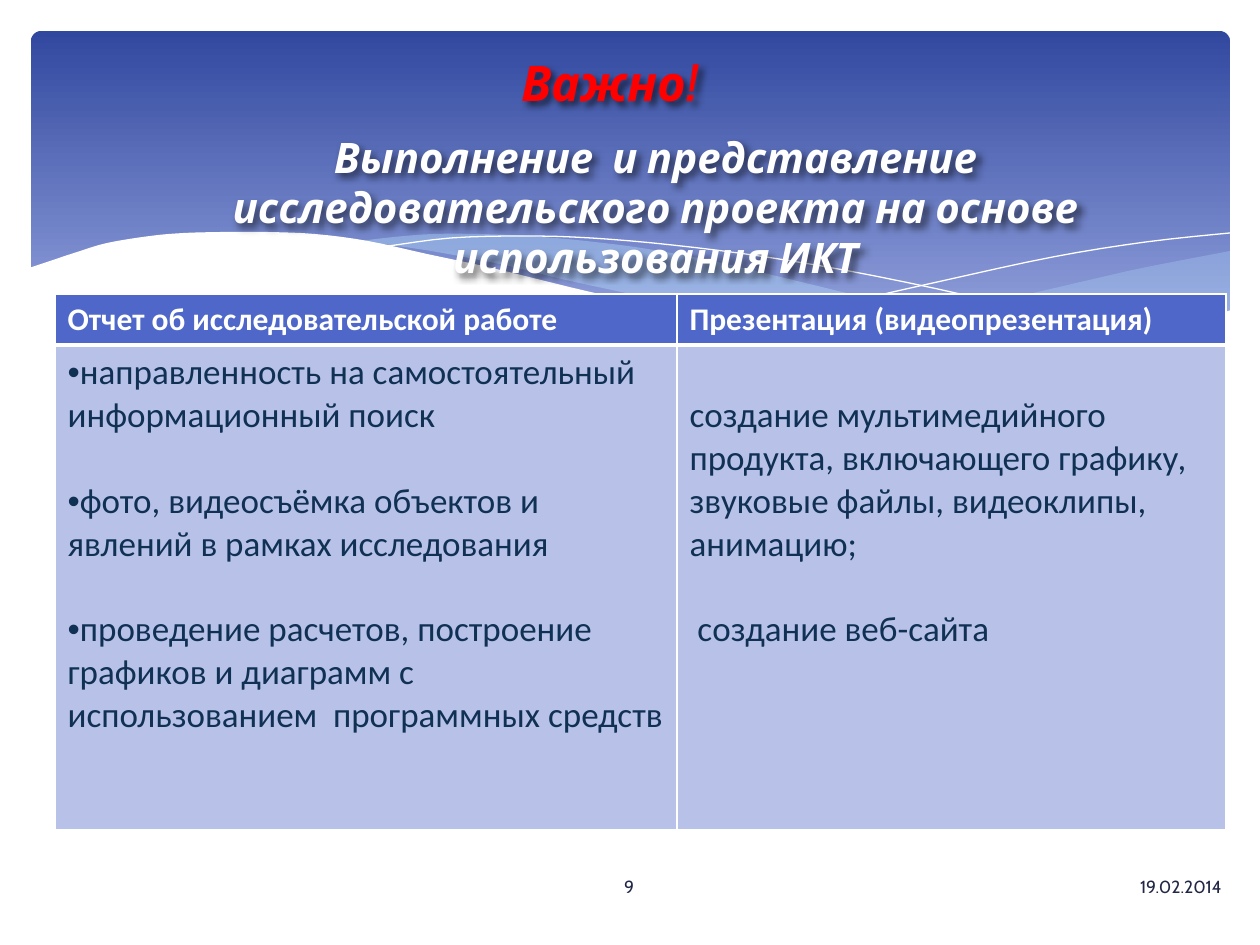
from lxml import etree
from pptx import Presentation
from pptx import util as u
from pptx.dml.color import RGBColor
from pptx.enum import shapes, text
from pptx.oxml import ns

WHITE = RGBColor(0xFF, 0xFF, 0xFF)
RED = RGBColor(0xFF, 0x00, 0x00)
NAVY = RGBColor(0x21, 0x27, 0x45)
INK = RGBColor(0x10, 0x31, 0x54)
HEADER = RGBColor(0x4E, 0x67, 0xC8)
BODY = RGBColor(0xB8, 0xC2, 0xE9)
SKY_TOP = RGBColor(0x31, 0x48, 0x9F)
SKY_BOTTOM = RGBColor(0x95, 0xA4, 0xDE)
PALE = RGBColor(0xB4, 0xDC, 0xFA)
EMU_PER_PX = 914400 / 126
LINE_GAP = 24.4

PALE_RIGHT = [
    [(1230, 251), (1142, 268), (1085, 281), (981, 305), (890, 324), (833, 334)],
    [(833, 334), (922, 345), (998, 349), (1064, 348), (1121, 343), (1178, 329),
     (1230, 311)],
]
PALE_MIDDLE = [
    [(1125, 344), (1017, 328), (890, 303), (793, 280), (717, 262), (648, 249),
     (586, 241), (529, 236), (479, 234), (433, 234), (394, 237), (360, 241)],
    [(360, 241), (431, 251), (509, 266), (566, 280), (668, 302), (757, 321),
     (838, 335), (910, 345), (974, 349), (1043, 350), (1092, 348), (1125, 344)],
]
FALLING_LINE = [
    [(389, 246), (451, 238), (524, 236), (591, 238), (672, 245), (766, 257),
     (875, 276), (1002, 304), (1143, 343)],
]
RISING_LINE = [
    [(772, 324), (847, 303), (942, 281), (1053, 257), (1146, 242), (1230, 233)],
]
WHITE_WAVE = [
    [(1231, 310), (1172, 330), (1118, 342), (1055, 348), (980, 348), (892, 343),
     (789, 330), (699, 315), (599, 294), (492, 268), (427, 254), (368, 241),
     (315, 234), (266, 232), (223, 232), (184, 233), (150, 236), (107, 243),
     (74, 253), (50, 261), (29, 268)],
    [(29, 268), (29, 415)],
    [(29, 415), (1231, 415)],
]


def px(n):
    return u.Emu(round(n * EMU_PER_PX))


def smooth(knots, steps=4):
    pts = [knots[0]] + knots + [knots[-1]]
    curve = [knots[0]]
    for a, b, c, d in zip(pts, pts[1:], pts[2:], pts[3:]):
        for t in (i / steps for i in range(1, steps + 1)):
            curve.append(tuple(
                (2 * q + (r - p) * t + (2 * p - 5 * q + 4 * r - s) * t ** 2
                 + (3 * q - p - 3 * r + s) * t ** 3) / 2
                for p, q, r, s in zip(a, b, c, d)))
    return curve


def add(parent, tag, **attrs):
    return etree.SubElement(parent, ns.qn(tag), **attrs)


class Deck:
    def __init__(self, width, height):
        self.prs = Presentation()
        self.prs.slide_width, self.prs.slide_height = px(width), px(height)
        self.slide = self.prs.slides.add_slide(self.prs.slide_layouts[5])
        self.shapes = self.slide.shapes

    def panel(self, x, y, w, h):
        sp = self.shapes.add_shape(
            shapes.MSO_SHAPE.ROUNDED_RECTANGLE, px(x), px(y), px(w), px(h))
        sp.adjustments[0] = 0.03
        sp.shadow.inherit = False
        sp.line.fill.background()
        sp.fill.gradient()
        sp.fill.gradient_angle = 270
        stops = zip(sp.fill.gradient_stops, (SKY_TOP, SKY_BOTTOM), (0, 0.9))
        for stop, color, position in stops:
            stop.color.rgb, stop.position = color, position

    def wave(self, parts, fill=None, alpha=100):
        pts = [(px(x), px(y)) for part in parts for x, y in smooth(part)]
        builder = self.shapes.build_freeform(*pts[0])
        builder.add_line_segments(pts[1:], close=fill is not None)
        sp = builder.convert_to_shape()
        sp.shadow.inherit = False
        if fill is None:
            sp.fill.background()
            sp.line.color.rgb = WHITE
            sp.line.width = u.Pt(0)
            return
        sp.line.fill.background()
        sp.fill.solid()
        sp.fill.fore_color.rgb = fill
        if alpha < 100:
            color = sp._element.spPr.find(".//" + ns.qn("a:srgbClr"))
            add(color, "a:alpha", val=str(alpha * 1000))

    def set_text(self, tf, lines, size, color, font="Calibri", bold=False,
                 italic=False, align=text.PP_ALIGN.LEFT):
        tf.word_wrap = True
        tf.text = "\n".join(lines)
        for p in tf.paragraphs:
            p.alignment = align
            for r in p.runs:
                r.font.size, r.font.name = u.Pt(size), font
                r.font.bold, r.font.italic = bold, italic
                r.font.color.rgb = color

    def soft_shadow(self, sp):
        effects = add(sp._element.spPr, "a:effectLst")
        shadow = add(effects, "a:outerShdw", blurRad="50800", dist="38100",
                     dir="2700000", algn="tl", rotWithShape="0")
        add(add(shadow, "a:srgbClr", val="000000"), "a:alpha", val="60000")

    def title(self, x, y, w, h, line):
        sp = self.shapes.title
        self.shapes._spTree.append(sp._element)
        sp.left, sp.top, sp.width, sp.height = px(x), px(y), px(w), px(h)
        sp.text_frame.vertical_anchor = text.MSO_ANCHOR.MIDDLE
        self.set_text(sp.text_frame, [line], 28, RED, "Cabin", True, True,
                      text.PP_ALIGN.CENTER)
        self.soft_shadow(sp)

    def label(self, x, y, w, h, line, size, color, align, **style):
        sp = self.shapes.add_textbox(px(x), px(y), px(w), px(h))
        sp.text_frame.vertical_anchor = text.MSO_ANCHOR.MIDDLE
        self.set_text(sp.text_frame, [line], size, color, "Cabin", align=align,
                      **style)
        return sp

    def subtitle(self, x, y, w, h, line):
        sp = self.label(x, y, w, h, line, 24, WHITE, text.PP_ALIGN.CENTER,
                        bold=True, italic=True)
        sp.text_frame.vertical_anchor = text.MSO_ANCHOR.TOP
        sp.text_frame.auto_size = text.MSO_AUTO_SIZE.SHAPE_TO_FIT_TEXT
        self.soft_shadow(sp)

    def cell(self, cell, lines, fill, size, color, bold, top, bottom):
        self.set_text(cell.text_frame, lines, size, color, bold=bold)
        tc_pr = cell._tc.get_or_add_tcPr()
        for side, width in zip("LRTB", (1, 1, top, bottom)):
            ln = add(tc_pr, f"a:ln{side}", w=str(u.Pt(width)))
            add(add(ln, "a:solidFill"), "a:srgbClr", val=str(WHITE))
        cell.fill.solid()
        cell.fill.fore_color.rgb = fill

    def table(self, x, y, widths, heights, headers, bodies):
        tbl = self.shapes.add_table(len(heights), len(widths), px(x), px(y),
                                    px(sum(widths)), px(sum(heights))).table
        tbl.horz_banding = False
        for row, height in zip(tbl.rows, heights):
            row.height = px(height)
        for i, width in enumerate(widths):
            tbl.columns[i].width = px(width)
            self.cell(tbl.cell(0, i), [headers[i]], HEADER, 18, WHITE, True, 1, 3)
            body = tbl.cell(1, i)
            self.cell(body, bodies[i], BODY, 20, INK, False, 3, 1)
            for p in body.text_frame.paragraphs[1:]:
                p.space_before = u.Pt(LINE_GAP)
        return tbl

    def bullets(self, tf):
        for p in tf.paragraphs:
            p_pr = p._p.get_or_add_pPr()
            p_pr.set("marL", "0")
            p_pr.set("indent", "0")
            add(p_pr, "a:buFont", typeface="Arial")
            add(p_pr, "a:buChar", char="•")


def main():
    deck = Deck(1260, 945)
    deck.panel(31, 31, 1199, 340)
    deck.wave(PALE_RIGHT, PALE, 29)
    deck.wave(PALE_MIDDLE, PALE, 40)
    deck.wave(FALLING_LINE)
    deck.wave(RISING_LINE)
    deck.wave(WHITE_WAVE, WHITE)
    deck.title(93, 40, 1045, 84, "Важно! ")
    tbl = deck.table(
        55, 294, (622, 549), (51, 485),
        ("Отчет об исследовательской работе", "Презентация (видеопрезентация)"),
        (["направленность на самостоятельный информационный поиск",
          "фото, видеосъёмка объектов и явлений в рамках исследования",
          "проведение расчетов, построение графиков и диаграмм с  использованием  "
          "программных средств"],
         ["создание мультимедийного продукта, включающего графику, звуковые файлы, "
          "видеоклипы, анимацию;",
          " создание веб-сайта"]))
    deck.bullets(tbl.cell(1, 0).text_frame)
    tbl.cell(1, 1).margin_top = px(49)
    deck.subtitle(105, 125, 1101, 115, "Выполнение  и представление "
                  "исследовательского проекта на основе использования ИКТ")
    deck.label(549, 862, 160, 50, "9", 10, NAVY, text.PP_ALIGN.CENTER)
    deck.label(712, 862, 522, 50, "19.02.2014", 10, NAVY, text.PP_ALIGN.RIGHT)
    deck.prs.save("out.pptx")


if __name__ == "__main__":
    main()
